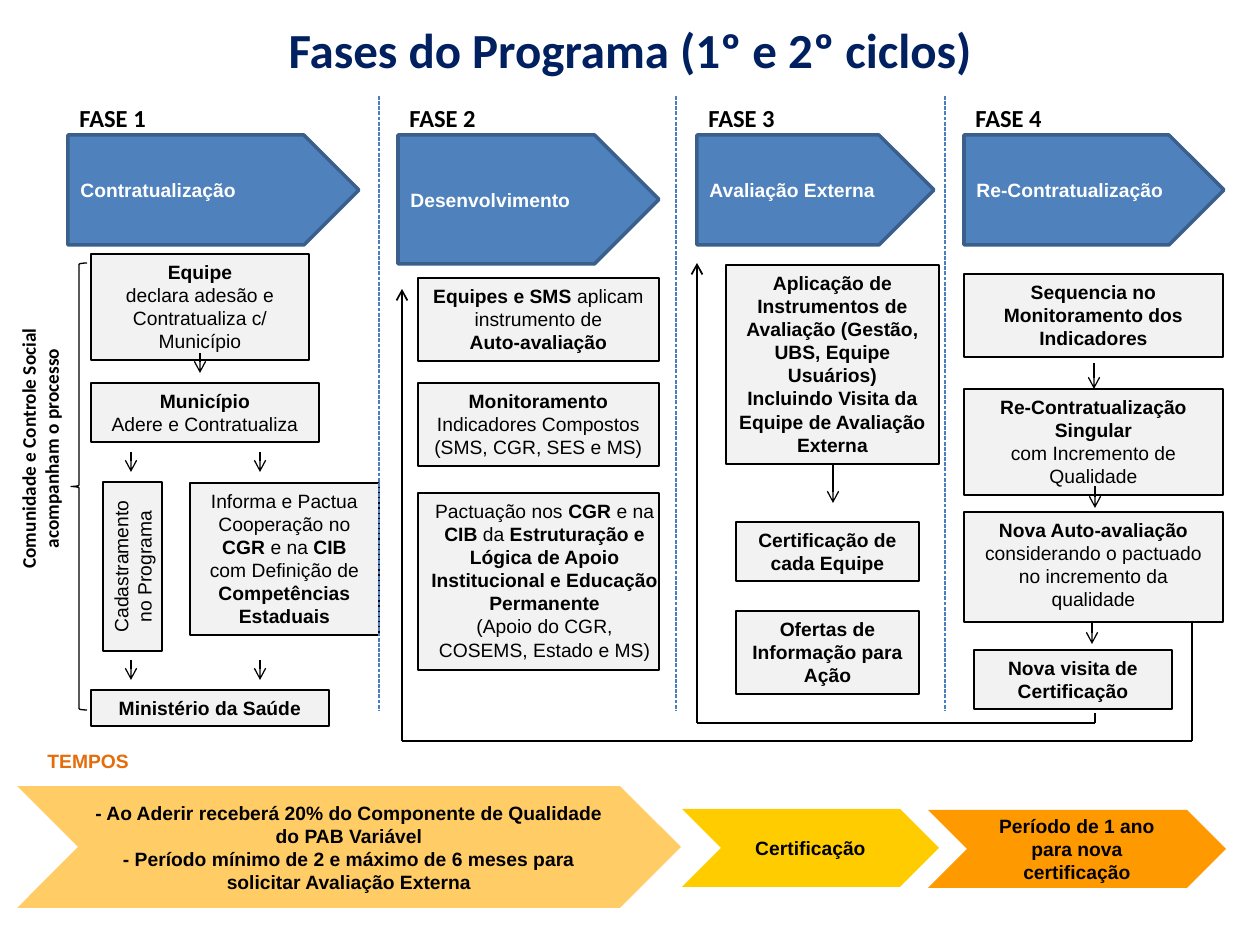
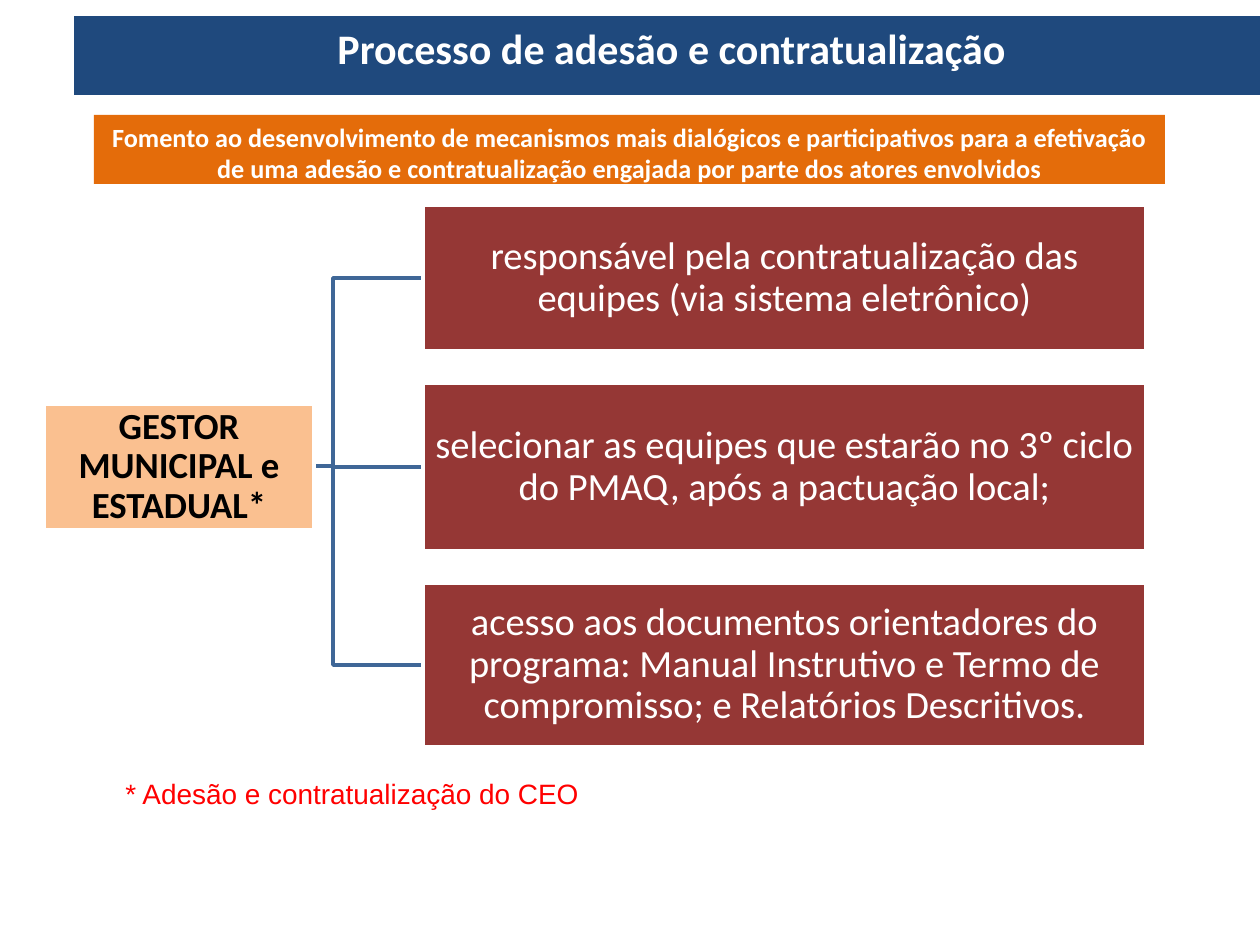
from lxml import etree
from pptx import Presentation
from pptx.dml.color import RGBColor
from pptx.enum.dml import MSO_LINE
from pptx.enum.shapes import MSO_CONNECTOR, MSO_SHAPE
from pptx.enum.text import MSO_ANCHOR, MSO_AUTO_SIZE, PP_ALIGN
from pptx.oxml.ns import qn
from pptx.util import Pt

PX = 914400 / 126
TITLE_ONLY = 5
LEFT, CENTER = PP_ALIGN.LEFT, PP_ALIGN.CENTER
TOP, MIDDLE = MSO_ANCHOR.TOP, MSO_ANCHOR.MIDDLE
NO_FIT = MSO_AUTO_SIZE.NONE
STRAIGHT = MSO_CONNECTOR.STRAIGHT
SHORT_DASH = MSO_LINE.SQUARE_DOT
RECTANGLE = MSO_SHAPE.RECTANGLE
PENTAGON = MSO_SHAPE.PENTAGON
CHEVRON = MSO_SHAPE.CHEVRON
LEFT_BRACE = MSO_SHAPE.LEFT_BRACE

COLORS = {
    "black": "000000", "white": "FFFFFF", "step": "F2F2F2",
    "phase": "4F81BD", "phase edge": "3A5F8C", "divider": "4B7EBC",
    "title": "002060", "band": "1F497D", "orange": "E46C0A",
    "joining": "FFCC66", "certification": "FFCC00", "renewal": "FF9900",
    "manager": "FAC090", "duty": "953735", "branch": "3F6797", "note": "FF0000",
}


def px(value):
    return round(value * PX)


def color(name):
    return RGBColor.from_string(COLORS[name])


def write_text(shape, text, size=11, font="Arial", ink="black", bold=False,
               align=CENTER, anchor=TOP, wrap=True, spacing=None, inset=None,
               right_inset=None):
    """Each line is a paragraph; ** switches bold on and off."""
    frame = shape.text_frame
    frame.word_wrap = wrap
    frame.auto_size = NO_FIT
    frame.vertical_anchor = anchor
    if inset is not None:
        frame.margin_left = frame.margin_right = px(inset)
        frame.margin_top = frame.margin_bottom = px(inset)
    if right_inset is not None:
        frame.margin_right = px(right_inset)
    for index, line in enumerate(text.split("\n")):
        paragraph = frame.add_paragraph() if index else frame.paragraphs[0]
        paragraph.alignment = align
        if spacing:
            paragraph.line_spacing = spacing
        for part, words in enumerate(line.split("**")):
            if not words:
                continue
            run = paragraph.add_run()
            run.text = words
            run.font.name = font
            run.font.size = Pt(size)
            run.font.bold = bold or part % 2 == 1
            run.font.color.rgb = color(ink)


def place(shape, left, top, width, height):
    shape.left, shape.top = px(left), px(top)
    shape.width, shape.height = px(width), px(height)


def paint(shape, fill=None, edge=None, edge_width=0.75):
    shape.shadow.inherit = False
    if fill:
        shape.fill.solid()
        shape.fill.fore_color.rgb = color(fill)
    else:
        shape.fill.background()
    if edge:
        shape.line.color.rgb = color(edge)
        shape.line.width = Pt(edge_width)
    else:
        shape.line.fill.background()


def add_box(slide, box, text="", kind=RECTANGLE, fill=None, edge=None,
            edge_width=0.75, rotation=0, **text_format):
    shape = slide.shapes.add_shape(kind, *map(px, box))
    shape.rotation = rotation
    paint(shape, fill, edge, edge_width)
    if text:
        write_text(shape, text, **text_format)
    return shape


def add_label(slide, box, text, rotation=0, **text_format):
    label = slide.shapes.add_textbox(*map(px, box))
    label.rotation = rotation
    write_text(label, text, **text_format)
    return label


def add_line(slide, start, end, ink="black", width=0.75, dash=None, arrow=False):
    line = slide.shapes.add_connector(STRAIGHT, *map(px, start + end))
    line.line.color.rgb = color(ink)
    line.line.width = Pt(width)
    if dash:
        line.line.dash_style = dash
    if arrow:
        etree.SubElement(line.line._get_or_add_ln(), qn("a:tailEnd"), type="arrow")
    etree.SubElement(line._element.spPr, qn("a:effectLst"))


def add_route(slide, points):
    """Chain of straight lines with an arrowhead on the last one."""
    for start, end in zip(points, points[1:]):
        add_line(slide, start, end, width=1, arrow=end == points[-1])


def add_branch(slide, points):
    builder = slide.shapes.build_freeform(*points[0], scale=PX)
    builder.add_line_segments(points[1:], close=False)
    paint(builder.convert_to_shape(), edge="branch", edge_width=2)


def add_titled_slide(presentation, text, box, **text_format):
    slide = presentation.slides.add_slide(presentation.slide_layouts[TITLE_ONLY])
    title = slide.shapes.title
    place(title, *box)
    write_text(title, text, font="Calibri", bold=True, **text_format)
    return slide


def build_phases(presentation):
    slide = add_titled_slide(presentation, "Fases do Programa (1º e 2º ciclos)",
                             (0, 0, 1260, 97), size=28, ink="title", anchor=MIDDLE)

    # Phase headings: name, left, width, height
    phases = [
        ("Contratualização", 68, 291, 110),
        ("Desenvolvimento", 398, 261, 129),
        ("Avaliação Externa", 697, 237, 110),
        ("Re-Contratualização", 964, 260, 110),
    ]
    for number, (name, left, width, height) in enumerate(phases, 1):
        add_label(slide, (left - 1, 97, 92, 43), f"FASE {number}", size=14,
                  font="Calibri", bold=True, align=LEFT, wrap=False)
        add_box(slide, (left, 135, width, height), name, PENTAGON, fill="phase",
                edge="phase edge", edge_width=2, ink="white", bold=True,
                align=LEFT, anchor=MIDDLE)

    # Steps of each phase
    steps = [
        ((91, 254, 218, 106),
         "**Equipe**\ndeclara adesão e Contratualiza c/ Município"),
        ((91, 383, 228, 59), "**Município**\nAdere e Contratualiza"),
        ((190, 483, 189, 152),
         "Informa e Pactua Cooperação no **CGR **e na **CIB **com Definição de "
         "**Competências Estaduais**"),
        ((91, 690, 238, 36), "**Ministério da Saúde**"),
        ((418, 278, 241, 83),
         "**Equipes e SMS **aplicam instrumento de\n**Auto-avaliação**"),
        ((418, 383, 241, 83),
         "**Monitoramento** Indicadores Compostos\n(SMS, CGR, SES e MS)"),
        ((726, 265, 213, 199),
         "**Aplicação de Instrumentos de Avaliação (Gestão, UBS, Equipe Usuários)**\n"
         "**Incluindo Visita da Equipe de Avaliação Externa**"),
        ((736, 522, 183, 59), "**Certificação de cada Equipe**"),
        ((736, 611, 183, 83), "**Ofertas de Informação para Ação**"),
        ((964, 274, 259, 83), "**Sequencia no Monitoramento dos Indicadores**"),
        ((964, 389, 259, 106),
         "**Re-Contratualização Singular**\ncom Incremento de Qualidade"),
        ((964, 512, 259, 110),
         "**Nova Auto-avaliação **considerando o pactuado no incremento da qualidade"),
        ((974, 650, 198, 59), "**Nova visita de Certificação**"),
    ]
    step_style = {"fill": "step", "edge": "black"}
    for box, text in steps:
        add_box(slide, box, text, **step_style)
    add_box(slide, (418, 493, 241, 177),
            "Pactuação nos **CGR **e na **CIB **da** Estruturação e Lógica de Apoio "
            "Institucional e Educação Permanente**\n"
            "(Apoio do CGR, COSEMS, Estado e MS)", right_inset=0, **step_style)
    add_box(slide, (48, 537, 169, 59), "Cadastramento no Programa",
            rotation=270, **step_style)

    # Community bracket
    add_box(slide, (71, 263, 16, 447), kind=LEFT_BRACE, edge="black")
    community = add_label(slide, (-144, 425, 368, 47),
                          "Comunidade e Controle Social acompanham o processo",
                          rotation=270, font="Calibri", bold=True)
    community.text_frame.margin_top = community.text_frame.margin_bottom = 0

    # Dividers between phases
    for x in (379, 676, 945):
        add_line(slide, (x, 96), (x, 710), ink="divider", dash=SHORT_DASH)

    # Arrows between steps: x, top, bottom
    arrows = [(200, 353, 373), (1094, 363, 389), (1095, 486, 508),
              (1092, 621, 644), (833, 464, 503)]
    arrows += [(x, top, top + 20) for x in (131, 260) for top in (452, 660)]
    for x, top, bottom in arrows:
        add_line(slide, (x, top), (x, bottom), arrow=True)

    # Return routes to phases 2 and 3
    add_route(slide, [(1192, 621), (1192, 741), (402, 741), (402, 289)])
    add_route(slide, [(1095, 713), (1095, 723), (697, 723), (697, 263)])

    # Timeline
    add_label(slide, (35, 743, 107, 36), "TEMPOS", ink="orange", bold=True,
              align=LEFT, wrap=False)
    periods = [
        ((17, 786, 664, 122), "joining",
         "- Ao Aderir receberá 20% do Componente de Qualidade do PAB Variável\n"
         "- Período mínimo de 2 e máximo de 6 meses para\n"
         "solicitar Avaliação Externa"),
        ((928, 810, 298, 78), "renewal", "Período de 1 ano para nova certificação"),
        ((682, 809, 257, 78), "certification", "Certificação"),
    ]
    for box, fill, text in periods:
        add_box(slide, box, text, CHEVRON, fill=fill, bold=True, anchor=MIDDLE)


def build_joining(presentation):
    slide = add_titled_slide(presentation, "Processo de adesão e contratualização",
                             (74, 16, 1186, 79), size=24, ink="white")
    title = slide.shapes.title
    title.fill.solid()
    title.fill.fore_color.rgb = color("band")
    title.text_frame.margin_left = px(22)

    add_box(slide, (94, 115, 1071, 69),
            "Fomento ao desenvolvimento de mecanismos mais dialógicos e participativos "
            "para a efetivação de uma adesão e contratualização engajada por parte dos "
            "atores envolvidos", fill="orange", size=15, font="Calibri",
            ink="white", bold=True)

    # Manager and duties: top, height, text
    duties = [
        (205, 146, "responsável pela contratualização das equipes (via sistema eletrônico)"),
        (383, 168, "selecionar as equipes que estarão no 3º ciclo do PMAQ, "
                   "após a pactuação local;"),
        (583, 164, "acesso aos documentos orientadores do programa: Manual Instrutivo "
                   "e Termo de compromisso; e Relatórios Descritivos."),
    ]
    for top, height, _ in duties:
        middle = top + height // 2
        add_branch(slide, [(242, 466), (333, 466), (333, middle), (423, middle)])
    tree_style = {"edge": "white", "edge_width": 2, "font": "Calibri",
                  "anchor": MIDDLE, "spacing": 0.9}
    add_box(slide, (44, 404, 270, 126), "GESTOR MUNICIPAL e ESTADUAL*",
            fill="manager", size=21, bold=True, inset=1, **tree_style)
    for top, height, text in duties:
        add_box(slide, (423, top, 723, height), text, fill="duty", size=22,
                ink="white", inset=2, **tree_style)

    add_label(slide, (113, 770, 774, 47), "* Adesão e contratualização do CEO",
              size=16, ink="note", align=LEFT)


def main():
    presentation = Presentation()
    presentation.slide_width, presentation.slide_height = px(1260), px(945)
    build_phases(presentation)
    build_joining(presentation)
    presentation.save("out.pptx")


if __name__ == "__main__":
    main()
